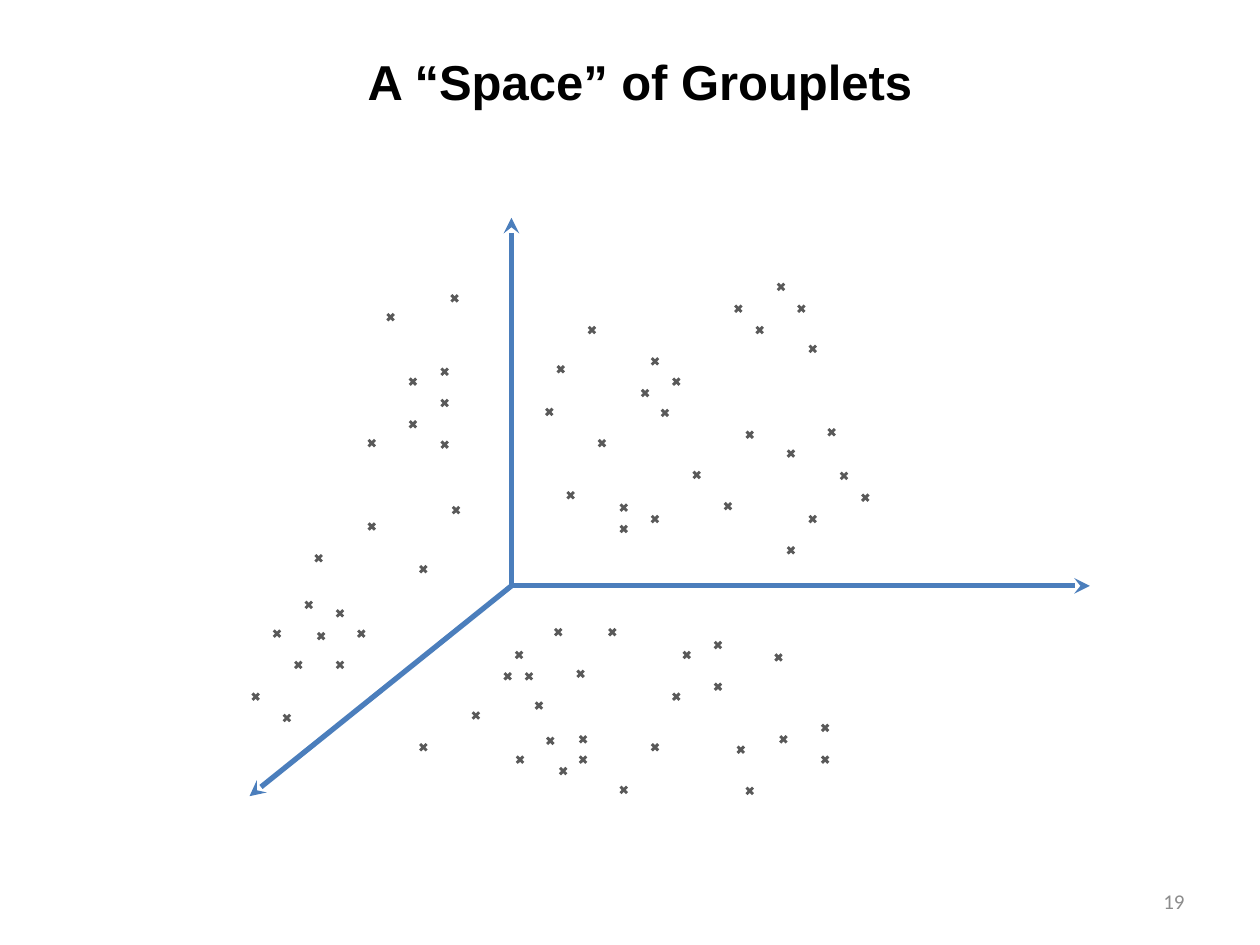
from lxml import etree
from pptx import Presentation
from pptx.dml.color import RGBColor
from pptx.enum.shapes import MSO_CONNECTOR, MSO_SHAPE
from pptx.enum.text import MSO_ANCHOR, PP_ALIGN
from pptx.oxml.ns import qn
from pptx.util import Cm, Pt

CROSS = MSO_SHAPE.MATH_MULTIPLY
STRAIGHT = MSO_CONNECTOR.STRAIGHT
MIDDLE = MSO_ANCHOR.MIDDLE
CENTER, RIGHT = PP_ALIGN.CENTER, PP_ALIGN.RIGHT


def color(value):
    return RGBColor.from_string(value)


def write(sp, text, size, font, fill, bold=False, align=CENTER):
    tf = sp.text_frame
    tf.word_wrap = True
    tf.vertical_anchor = MIDDLE
    p = tf.paragraphs[0]
    p.alignment = align
    r = p.add_run()
    r.text = text
    r.font.size = Pt(size)
    r.font.name = font
    r.font.bold = bold
    r.font.color.rgb = color(fill)


prs = Presentation()
prs.slide_width, prs.slide_height = Cm(25.4), Cm(19.05)
s = prs.slides.add_slide(prs.slide_layouts[5])

title = s.shapes.title
title.left, title.top, title.width, title.height = Cm(2.74), Cm(0.91), Cm(20.32), Cm(1.45)
write(title, "A “Space” of Grouplets", 28, "Arial", "000000", bold=True)

origin = Cm(10.31), Cm(11.81)
for x, y in [(10.31, 4.39), (21.97, 11.81), (5.03, 16.05)]:
    axis = s.shapes.add_connector(STRAIGHT, *origin, Cm(x), Cm(y))
    axis.line.color.rgb = color("4B7EBC")
    axis.line.width = Pt(3)
    etree.SubElement(axis.line._get_or_add_ln(), qn("a:tailEnd"), type="stealth")
    etree.SubElement(axis._element.spPr, qn("a:effectLst"))

back_wall = [
    (15.62, 5.66), (16.03, 6.1), (15.19, 6.53), (14.76, 6.1), (16.26, 6.91),
    (11.81, 6.53), (11.18, 7.32), (12.01, 8.81), (10.95, 8.18), (16.64, 8.59),
    (15.82, 9.02), (13.92, 9.45), (11.38, 9.86), (15.82, 10.97), (14.55, 10.08),
    (13.08, 7.16), (13.51, 7.57), (13.28, 8.2), (12.88, 7.8), (13.08, 10.34),
    (12.45, 10.11), (12.45, 10.54), (14.99, 8.64), (16.89, 9.47), (17.32, 9.91),
    (16.26, 10.34),
]
side_wall = [
    (5.66, 14.35), (7.75, 6.27), (6.3, 11.13), (9.04, 5.89), (7.37, 8.81),
    (5.03, 13.92), (8.41, 11.35), (7.37, 10.49), (8.84, 7.37), (8.2, 7.57),
    (8.84, 8), (8.2, 8.43), (8.84, 8.84), (9.07, 10.16), (6.1, 12.07),
    (6.73, 12.24), (7.16, 12.65), (6.35, 12.7), (5.46, 12.65), (5.89, 13.28),
    (6.73, 13.28),
]
floor = [
    (15.57, 13.13), (11.58, 13.46), (12.22, 12.62), (11.13, 12.62), (9.47, 14.3),
    (10.74, 14.1), (14.99, 15.82), (13.08, 14.94), (12.45, 15.8), (8.41, 14.94),
    (10.34, 13.08), (10.11, 13.51), (10.54, 13.51), (14.35, 12.88), (13.72, 13.08),
    (14.35, 13.72), (13.51, 13.92), (10.97, 14.81), (11.63, 14.78), (11.63, 15.19),
    (11.23, 15.42), (10.36, 15.19), (16.51, 14.55), (16.51, 15.19), (15.67, 14.78),
    (14.81, 14.99),
]
for x, y in back_wall + side_wall + floor:
    sp = s.shapes.add_shape(CROSS, Cm(x), Cm(y), Cm(0.25), Cm(0.25))
    sp.shadow.inherit = False
    sp.fill.solid()
    sp.fill.fore_color.rgb = color("595959")
    sp.line.fill.background()

number = s.shapes.add_textbox(Cm(18.21), Cm(17.65), Cm(5.92), Cm(1.02))
write(number, "19", 12, "Calibri", "8C8C8C", align=RIGHT)

prs.save("out.pptx")
